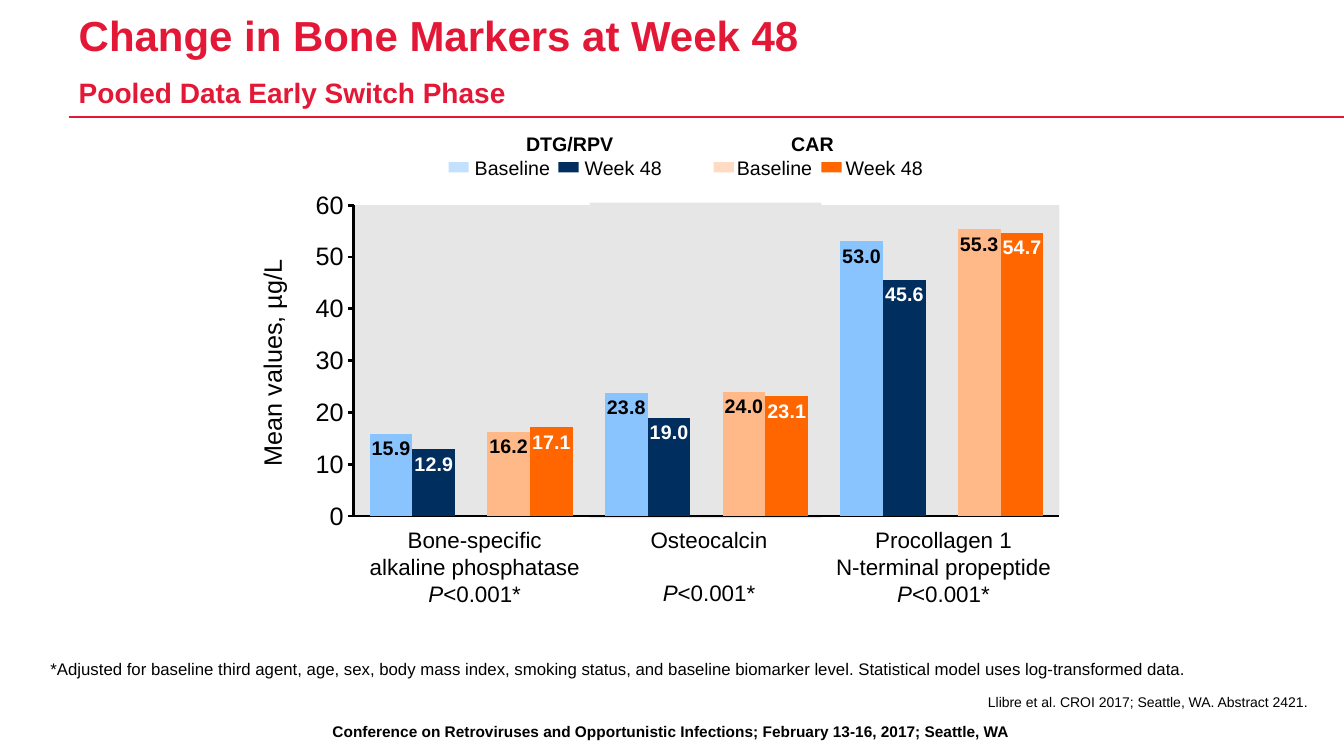
from dataclasses import dataclass

import pptx
import pptx.chart.data
import pptx.dml.color
import pptx.enum.chart
import pptx.enum.shapes
import pptx.enum.text
import pptx.oxml
import pptx.oxml.ns
import pptx.util
from lxml import etree

Pt = pptx.util.Pt
qn = pptx.oxml.ns.qn
Align = pptx.enum.text.PP_ALIGN
Anchor = pptx.enum.text.MSO_ANCHOR
FONT = "Arial"
BLACK, WHITE, RED, GREY = "000000", "FFFFFF", "E31836", "E6E6E6"
BLUE, NAVY, PEACH, ORANGE = "89C4FF", "002F5F", "FFB989", "FF6600"


@dataclass
class Marker:
    name: list[str]
    left: float
    width: float


@dataclass
class LegendEntry:
    label: str
    swatch_left: float
    label_left: float
    colour: str
    alpha: int = 100


@dataclass
class ChartSeries:
    name: str
    values: list[float]
    colours: tuple[str, str]
    label_colour: str
    number_format: str


MARKERS = [
    Marker(["Bone-specific", "alkaline phosphatase"], 263.5, 151.2),
    Marker(["Osteocalcin"], 464.4, 84.2),
    Marker(["Procollagen 1", "N-terminal propeptide"], 596.2, 155.5),
]
LEGEND = [
    LegendEntry("Baseline", 320.4, 339.1, BLUE, 50),
    LegendEntry("Week 48", 398.9, 417.6, NAVY),
    LegendEntry("Baseline", 509.8, 526.3, PEACH, 50),
    LegendEntry("Week 48", 586.8, 604.1, ORANGE),
]
# Categories alternate between the DTG/RPV and CAR arms
SERIES = [
    ChartSeries("Series 1", [15.9, 16.2, 23.8, 24, 53, 55.3], (BLUE, PEACH), BLACK, "0.0"),
    ChartSeries("Series 2", [12.9, 17.1, 19, 23.1, 45.6, 54.7], (NAVY, ORANGE), WHITE, "#,##0.0"),
]


def rgb(colour: str) -> pptx.dml.color.RGBColor:
    return pptx.dml.color.RGBColor.from_string(colour)


def paint(fill, colour: str) -> None:
    fill.solid()
    fill.fore_color.rgb = rgb(colour)


def style(font, size: float, colour: str = BLACK, bold: bool = False, italic: bool = False) -> None:
    font.name, font.size, font.bold, font.italic = FONT, Pt(size), bold, italic
    font.color.rgb = rgb(colour)


def add_span(para, text: str, size: float, colour: str = BLACK,
             bold: bool = False, italic: bool = False) -> None:
    span = para.add_run()
    span.text = text
    style(span.font, size, colour, bold, italic)


def clear_insets(frame) -> None:
    frame.margin_left = frame.margin_right = frame.margin_top = frame.margin_bottom = 0


def add_box(page, left: float, top: float, width: float, height: float,
            wrap: bool = False, align=Align.LEFT):
    box = page.shapes.add_textbox(Pt(left), Pt(top), Pt(width), Pt(height))
    frame = box.text_frame
    frame.word_wrap = wrap
    clear_insets(frame)
    frame.paragraphs[0].alignment = align
    return frame


def add_block(page, left: float, top: float, width: float, height: float,
              colour: str, alpha: int = 100) -> None:
    block = page.shapes.add_shape(pptx.enum.shapes.MSO_SHAPE.RECTANGLE,
                                  Pt(left), Pt(top), Pt(width), Pt(height))
    block.shadow.inherit = False
    paint(block.fill, colour)
    block.line.fill.background()
    if alpha < 100:
        tint = next(block.element.spPr.iter(qn("a:srgbClr")))
        etree.SubElement(tint, qn("a:alpha")).set("val", str(alpha * 1000))


def make_layout(**settings):
    layout = pptx.oxml.parse_xml(f"<c:layout {pptx.oxml.ns.nsdecls('c')}><c:manualLayout/></c:layout>")
    for tag, value in settings.items():
        etree.SubElement(layout[0], qn(f"c:{tag}")).set("val", str(value))
    return layout


def place(part, layout, index: int) -> None:
    for old in part.findall(qn("c:layout")):
        part.remove(old)
    part.insert(index, layout)


def add_marker_chart(page) -> None:
    data = pptx.chart.data.CategoryChartData()
    data.categories = [str(number) for number in range(1, 7)]
    for item in SERIES:
        data.add_series(item.name, item.values)
    chart = page.shapes.add_chart(pptx.enum.chart.XL_CHART_TYPE.COLUMN_CLUSTERED,
                                  Pt(131.8), Pt(26.6), Pt(635.8), Pt(357.1), data).chart
    style(chart.font, 18)
    chart.has_legend = chart.has_title = False

    # Columns and their values
    plot = chart.plots[0]
    plot.gap_width, plot.overlap, plot.vary_by_categories = 75, 0, False
    for series, item in zip(plot.series, SERIES):
        paint(series.format.fill, item.colours[0])
        for index in range(len(item.values)):
            paint(series.points[index].format.fill, item.colours[index % 2])
        labels = series.data_labels
        labels.show_value = True
        labels.position = pptx.enum.chart.XL_LABEL_POSITION.INSIDE_END
        labels.number_format, labels.number_format_is_linked = item.number_format, False
        style(labels.font, 14, item.label_colour, True)

    # Axes
    tick = pptx.enum.chart.XL_TICK_MARK
    across, upright = chart.category_axis, chart.value_axis
    for axis, weight, mark in ((across, 1.5, tick.NONE), (upright, 2, tick.OUTSIDE)):
        axis.has_major_gridlines = False
        axis.major_tick_mark, axis.minor_tick_mark = mark, tick.NONE
        axis.format.line.color.rgb = rgb(BLACK)
        axis.format.line.width = Pt(weight)
        style(axis.tick_labels.font, 18)
    across.tick_label_position = pptx.enum.chart.XL_TICK_LABEL_POSITION.NONE
    upright.minimum_scale, upright.maximum_scale, upright.major_unit = 0, 60, 10
    upright.tick_labels.number_format = "0"
    upright.tick_labels.number_format_is_linked = False
    frame = upright.axis_title.text_frame
    add_span(frame.paragraphs[0], "Mean values, µg/L", 18)

    # Plot area and axis title placement
    area = next(chart.element.iter(qn("c:plotArea")))
    place(area, make_layout(layoutTarget="inner", xMode="edge", yMode="edge",
                            x=0.19, y=0.336, w=0.793, h=0.622), 0)
    area.append(pptx.oxml.parse_xml(
        f"<c:spPr {pptx.oxml.ns.nsdecls('c', 'a')}><a:solidFill>"
        f'<a:srgbClr val="{GREY}"/></a:solidFill></c:spPr>'))
    title = next(area.iter(qn("c:title")))
    next(title.iter(qn("a:bodyPr"))).set("rot", "-5400000")
    place(title, make_layout(xMode="edge", yMode="edge", x=0.075, y=0.436), 1)


def main() -> None:
    deck = pptx.Presentation()
    deck.slide_width, deck.slide_height = Pt(960), Pt(540)
    page = deck.slides.add_slide(deck.slide_layouts[5])

    # Title and rule
    title = page.shapes.title
    title.left, title.top, title.width, title.height = Pt(56.2), Pt(11.5), Pt(792), Pt(66.2)
    frame = title.text_frame
    frame.auto_size = pptx.enum.text.MSO_AUTO_SIZE.NONE
    frame.word_wrap, frame.vertical_anchor = True, Anchor.BOTTOM
    clear_insets(frame)
    para = frame.paragraphs[0]
    para.alignment, para.line_spacing = Align.LEFT, Pt(35)
    add_span(para, "Change in Bone Markers at Week 48", 30, RED, True)
    para.add_line_break()
    add_span(para, "Pooled Data Early Switch Phase", 20, RED, True)
    rule = page.shapes.add_connector(pptx.enum.shapes.MSO_CONNECTOR.STRAIGHT,
                                     Pt(49), Pt(83.5), Pt(960), Pt(83.5))
    rule.line.color.rgb, rule.line.width = rgb(RED), Pt(1.5)
    etree.SubElement(rule.element.spPr, qn("a:effectLst"))

    # Chart over its middle band
    add_block(page, 421.2, 144.7, 165.6, 225.4, GREY)
    add_marker_chart(page)

    # Marker names with P values on a shared third line
    for marker in MARKERS:
        frame = add_box(page, marker.left, 375.8, marker.width, 58.3, align=Align.CENTER)
        para = frame.paragraphs[0]
        for index, line in enumerate(marker.name):
            if index:
                para.add_line_break()
            add_span(para, line, 16)
        para = frame.add_paragraph()
        para.alignment = Align.CENTER
        para.space_before = Pt(18.4 * (2 - len(marker.name)))
        add_span(para, "P", 16, italic=True)
        add_span(para, "<0.001*", 16)

    # Legend
    for arm, left, width in (("DTG/RPV", 375.8, 62.6), ("CAR", 565.2, 31)):
        add_span(add_box(page, left, 94.3, width, 17.3).paragraphs[0], arm, 14, bold=True)
    for entry in LEGEND:
        add_block(page, entry.swatch_left, 115.9, 14.4, 7.2, entry.colour, entry.alpha)
        frame = add_box(page, entry.label_left, 111.6, 59, 17.3, True)
        add_span(frame.paragraphs[0], entry.label, 14)

    # Footnote, citation and conference line
    frame = add_box(page, 36, 470.9, 877.7, 14.4, True)
    frame.vertical_anchor = Anchor.BOTTOM
    add_span(frame.paragraphs[0], "*Adjusted for baseline third agent, age, sex, body mass index, smoking status, "
             "and baseline biomarker level. Statistical model uses log-transformed data.", 12)
    frame = add_box(page, 56.2, 495.4, 877.7, 14.4, True, Align.RIGHT)
    add_span(frame.paragraphs[0], "Llibre et al. CROI 2017; Seattle, WA. Abstract 2421.", 10)
    frame = add_box(page, 6.5, 515.5, 946, 17.3, True, Align.CENTER)
    add_span(frame.paragraphs[0], "Conference on Retroviruses and Opportunistic Infections; "
             "February 13-16, 2017; Seattle, WA", 11, bold=True)

    deck.save("out.pptx")


if __name__ == "__main__":
    main()
